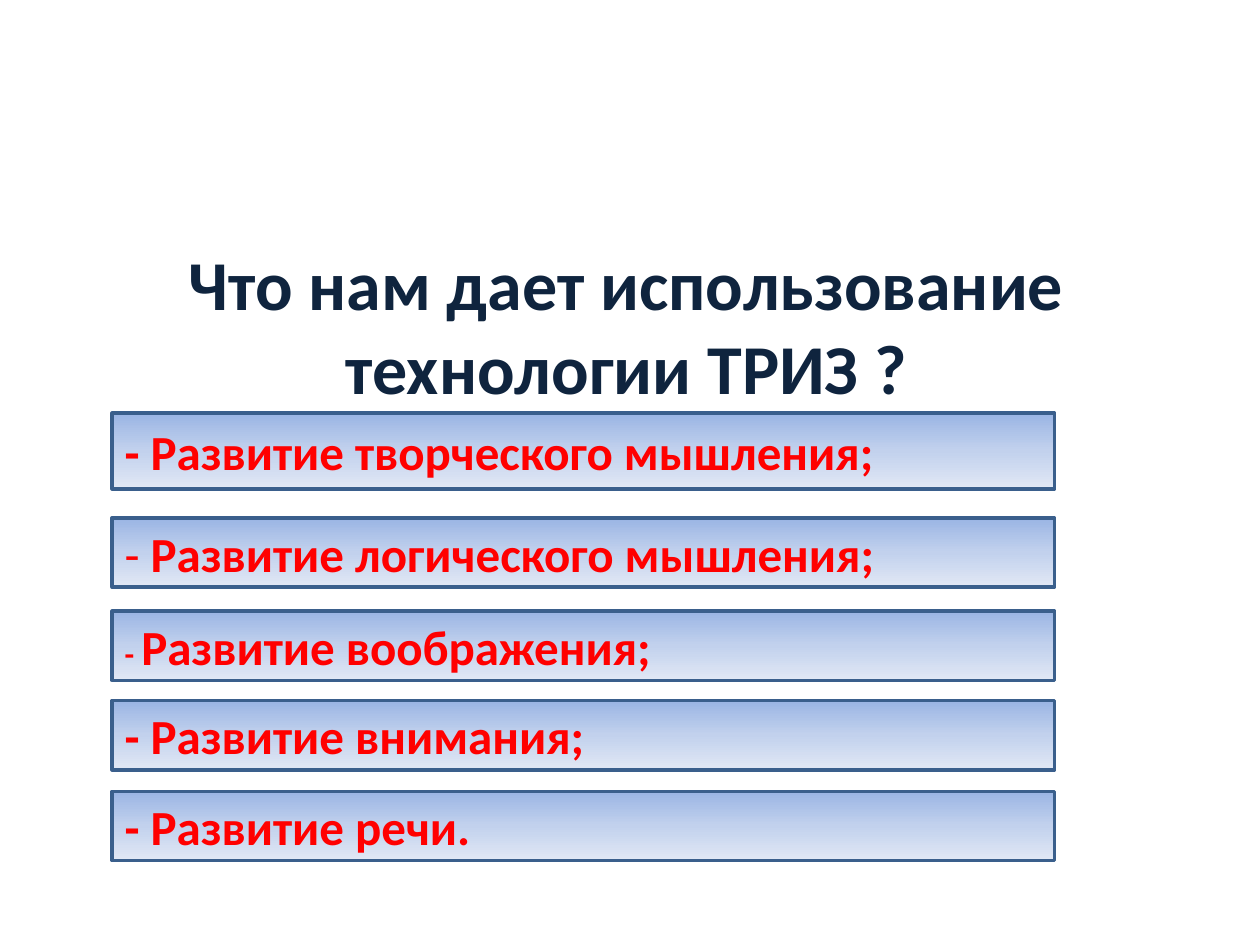
from copy import deepcopy
from dataclasses import dataclass

from pptx import Presentation
from pptx.dml.color import RGBColor as RGB
from pptx.enum.shapes import MSO_SHAPE as SHAPE
from pptx.enum.text import MSO_ANCHOR as ANCHOR, PP_ALIGN as ALIGN
from pptx.oxml.ns import qn
from pptx.util import Inches, Pt


@dataclass(frozen=True)
class Theme:
    font: str = "Calibri"
    title: str = "0F243E"
    text: str = "FF0000"
    line: str = "3A5F8C"
    gradient: tuple = ((0, "9AB5E4"), (0.5, "C2D1ED"), (1, "E1E8F5"))
    title_size: int = 40
    text_size: int = 28
    small_size: int = 18


class Deck:
    def __init__(self, prs, theme):
        self.theme = theme
        self.slide = prs.slides.add_slide(prs.slide_layouts[6])

    def style(self, font, size, color):
        font.name = self.theme.font
        font.size = Pt(size)
        font.bold = True
        font.color.rgb = RGB.from_string(color)

    def title(self, text, left, top, width, height):
        box = self.slide.shapes.add_textbox(
            Inches(left), Inches(top), Inches(width), Inches(height))
        tf = box.text_frame
        tf.word_wrap = True
        tf.vertical_anchor = ANCHOR.MIDDLE
        p = tf.paragraphs[0]
        p.text = text
        p.alignment = ALIGN.CENTER
        self.style(p.font, self.theme.title_size, self.theme.title)

    def gradient(self, sp):
        sp.fill.gradient()
        sp.fill.gradient_angle = 270
        stops = sp._element.spPr.find(qn("a:gradFill")).find(qn("a:gsLst"))
        stops.append(deepcopy(stops[-1]))
        for stop, (position, color) in zip(sp.fill.gradient_stops, self.theme.gradient):
            stop.position = position
            stop.color.rgb = RGB.from_string(color)

    def bar(self, runs, left, top, width, height):
        sp = self.slide.shapes.add_shape(
            SHAPE.RECTANGLE, Inches(left), Inches(top), Inches(width), Inches(height))
        sp.shadow.inherit = False
        self.gradient(sp)
        sp.line.color.rgb = RGB.from_string(self.theme.line)
        sp.line.width = Pt(2)
        tf = sp.text_frame
        tf.word_wrap = True
        tf.vertical_anchor = ANCHOR.MIDDLE
        p = tf.paragraphs[0]
        p.alignment = ALIGN.LEFT
        self.style(p.font, self.theme.text_size, self.theme.text)
        for text, size, bold in runs:
            r = p.add_run()
            r.text = text
            self.style(r.font, size, self.theme.text)
            r.font.bold = bold


def main():
    prs = Presentation()
    prs.slide_width, prs.slide_height = Inches(10), Inches(7.5)
    theme = Theme()
    deck = Deck(prs, theme)
    deck.title("Что нам дает использование технологии ТРИЗ ?", 0.47, 1.95, 9, 1.25)

    size, small = theme.text_size, theme.small_size
    benefits = [
        (3.28, 0.6, [("- Развитие творческого мышления;", size, True)]),
        (4.11, 0.55, [("-", size, False), (" Развитие логического мышления;", size, True)]),
        (4.85, 0.55, [("- ", small, True), ("Развитие воображения;", size, True)]),
        (5.56, 0.55, [("- Развитие внимания;", size, True)]),
        (6.28, 0.55, [("- Развитие речи.", size, True)]),
    ]
    for top, height, runs in benefits:
        deck.bar(runs, 0.89, top, 7.48, height)
    prs.save("out.pptx")


if __name__ == "__main__":
    main()
